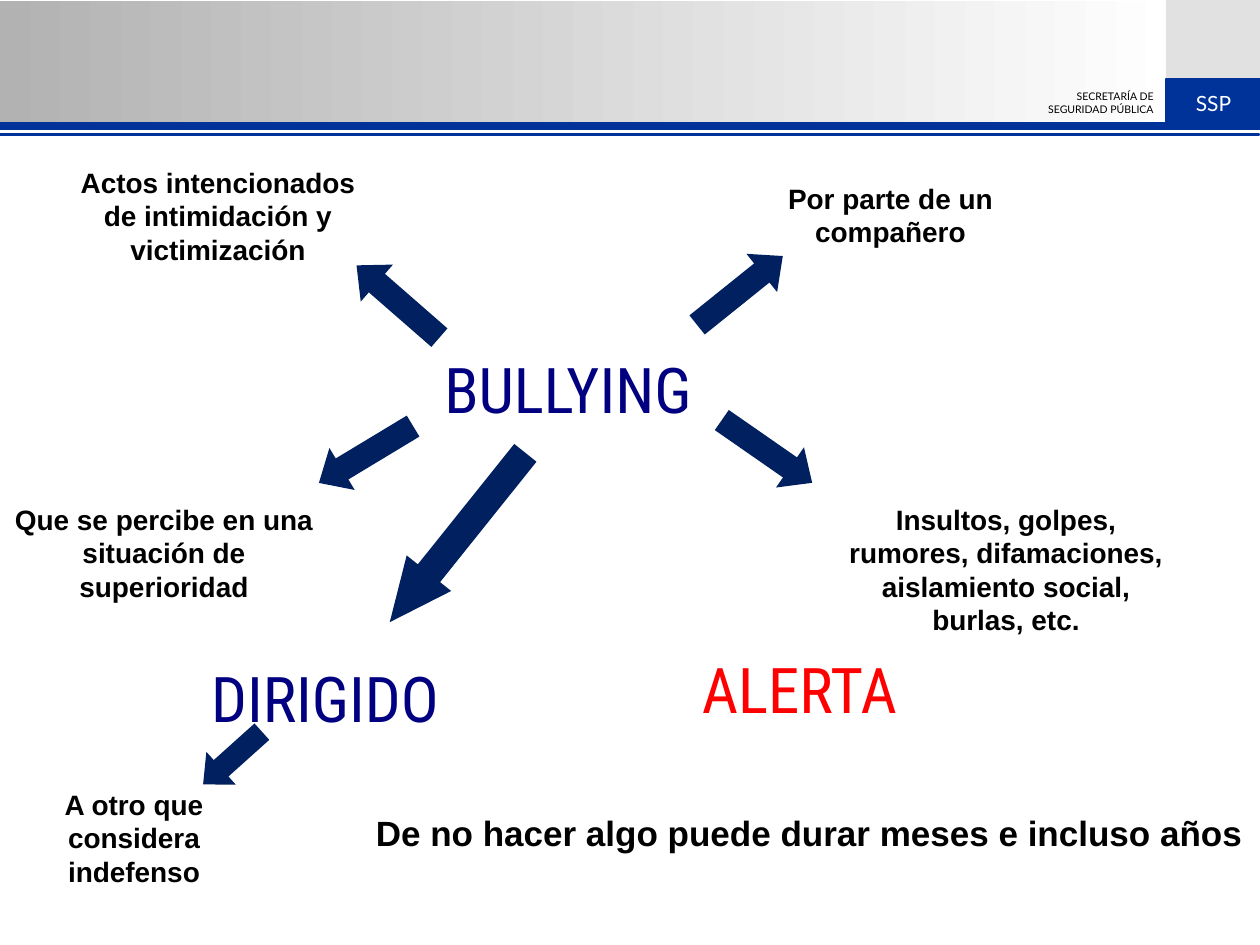
from pptx import Presentation
from pptx.dml.color import RGBColor
from pptx.enum.shapes import MSO_SHAPE
from pptx.enum.text import MSO_ANCHOR, MSO_AUTO_SIZE, PP_ALIGN
from pptx.util import Emu, Pt

RECT = MSO_SHAPE.RECTANGLE
ARROW = MSO_SHAPE.RIGHT_ARROW
TOP = MSO_ANCHOR.TOP
FIXED = MSO_AUTO_SIZE.NONE
CENTER, RIGHT = PP_ALIGN.CENTER, PP_ALIGN.RIGHT
EMU_PER_PX = 914400 / 126
BLUE, NAVY, ARROW_NAVY = "003399", "000080", "002060"
BLACK, WHITE, RED = "000000", "FFFFFF", "FF0000"

rgb = RGBColor.from_string


def px(*lengths):
    return [Emu(round(length * EMU_PER_PX)) for length in lengths]


def write(shape, text, font, size, color, bold=False, align=CENTER, wrap=True):
    frame = shape.text_frame
    frame.text = text
    frame.word_wrap = wrap
    frame.auto_size = FIXED
    frame.vertical_anchor = TOP
    for paragraph in frame.paragraphs:
        paragraph.alignment = align
        for run in paragraph.runs:
            run.font.name = font
            run.font.size = Pt(size)
            run.font.bold = bold
            run.font.color.rgb = rgb(color)


prs = Presentation()
prs.slide_width, prs.slide_height = px(1260, 945)
slide = prs.slides.add_slide(prs.slide_layouts[5])
shapes = slide.shapes

# Header band fading from grey to white
band = shapes.add_shape(RECT, *px(0, 1, 1176, 124))
band.shadow.inherit = False
band.line.fill.background()
band.fill.gradient()
band.fill.gradient_angle = 0
for stop, color in zip(band.fill.gradient_stops, ("B2B2B2", WHITE)):
    stop.color.rgb = rgb(color)

# Header blocks and rules
for box, color in [
    ((1166, 0, 94, 86), "E1E1E1"),
    ((1166, 79, 94, 44), BLUE),
    ((0, 123, 1260, 6), BLUE),
    ((-1, 134, 1260, 1), BLUE),
]:
    block = shapes.add_shape(RECT, *px(*box))
    block.shadow.inherit = False
    block.fill.solid()
    block.fill.fore_color.rgb = rgb(color)
    if color == BLUE:
        block.line.color.rgb = rgb(color)
        block.line.width = Pt(0.75)
    else:
        block.line.fill.background()

# Header labels
initials = shapes.add_textbox(*px(1178, 84, 71, 38))
write(initials, "SSP", "Lato", 12, WHITE)
agency = shapes.add_textbox(*px(1025, 84, 141, 38))
write(agency, "SECRETARÍA DE\nSEGURIDAD PÚBLICA", "Lato", 6, BLACK, align=RIGHT)

# Ideas around the centre
for box, text, size in [
    ((54, 159, 328, 115), "Actos intencionados de intimidación y victimización", 16),
    ((0, 496, 328, 115), "Que se percibe en una situación de superioridad", 16),
    ((752, 175, 277, 81), "Por parte de un compañero", 16),
    ((25, 781, 218, 115), "A otro que considera indefenso", 16),
    ((824, 496, 364, 149),
     "Insultos, golpes, rumores, difamaciones, aislamiento social, burlas, etc.", 16),
    ((362, 805, 895, 55), "De no hacer algo puede durar meses e incluso años", 20),
]:
    idea = shapes.add_textbox(*px(*box))
    write(idea, text, "Arial", size, BLACK, bold=True)

# Arrows: box, rotation, head length relative to height
for box, angle, head in [
    ((343, 277, 110, 49), 221.1, 0.55),
    ((685, 266, 110, 49), 321.2, 0.55),
    ((712, 427, 110, 49), 34.8, 0.55),
    ((311, 430, 110, 49), 148.9, 0.55),
    ((349, 509, 217, 57), 128.7, 1.1),
    ((193, 736, 79, 44), 138.1, 0.55),
]:
    arrow = shapes.add_shape(ARROW, *px(*box))
    arrow.adjustments[0] = 0.5
    arrow.adjustments[1] = head
    arrow.rotation = angle
    arrow.shadow.inherit = False
    arrow.fill.solid()
    arrow.fill.fore_color.rgb = rgb(ARROW_NAVY)
    arrow.line.fill.background()

# Title, wide enough for one line, and secondary headings
title = shapes.title
title.left, title.top, title.width, title.height = px(418, 344, 300, 78)
write(title, "BULLYING", "Roboto Condensed", 36, NAVY)
for box, text, color in [
    ((199, 653, 252, 69), "DIRIGIDO", NAVY),
    ((662, 644, 275, 159), "ALERTA", RED),
]:
    heading = shapes.add_textbox(*px(*box))
    write(heading, text, "Roboto Condensed", 36, color, wrap=False)

prs.save("out.pptx")
